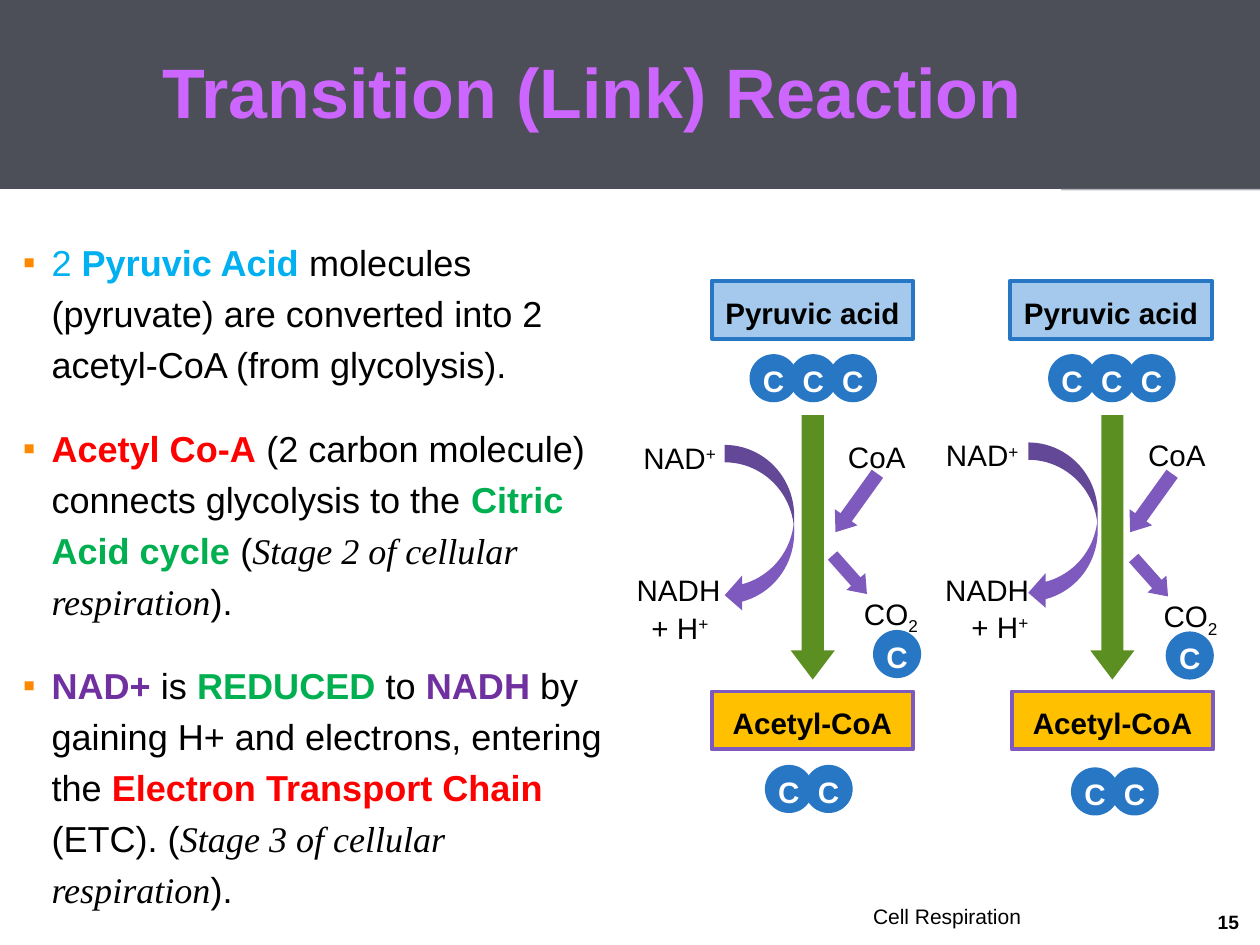
import pptx
import pptx.dml.color
import pptx.enum.shapes
import pptx.enum.text
import pptx.oxml.ns
import pptx.util
from lxml import etree

Cm, Pt = pptx.util.Cm, pptx.util.Pt
KIND = pptx.enum.shapes.MSO_SHAPE
ALIGN = pptx.enum.text.PP_ALIGN
ANCHOR = pptx.enum.text.MSO_ANCHOR

BLUE, PURPLE, GREEN = "2877C4", "7E5ABE", "5B8F22"
BLACK, RED, LEAF, VIOLET = "000000", "FF0000", "00B050", "7030A0"
BULLET = "FE8900"


def strong(color):
    return {"color": color, "bold": True}


STAGE = {"font": "Times New Roman", "italic": True}

TITLE = "Transition (Link) Reaction"
POINTS = [
    [("2 ", {"color": "00B0F0"}), ("Pyruvic Acid ", strong("00B0F0")),
     ("molecules (pyruvate) are converted into 2 acetyl-CoA (from glycolysis).", {})],
    [("Acetyl Co-A", strong(RED)),
     (" (2 carbon molecule) connects glycolysis to the ", {}),
     ("Citric Acid cycle ", strong(LEAF)), ("(", {}),
     ("Stage 2 of cellular respiration", STAGE), (").", {})],
    [("NAD+", strong(VIOLET)), (" is ", {}), ("REDUCED", strong(LEAF)),
     (" to ", {}), ("NADH", strong(VIOLET)),
     (" by gaining H+ and electrons, entering the ", {}),
     ("Electron Transport Chain ", strong(RED)), ("(ETC). (", {}),
     ("Stage 3 of cellular respiration", STAGE), (").", {})],
]

# Each part of the reaction: its places in the left and right pathway (cm)
ACIDS = [  # text, fill, line, places
    ("Pyruvic acid", "A4C9EC", BLUE, [(14.35, 5.66), (20.37, 5.66)]),
    ("Acetyl-CoA", "FFC000", PURPLE, [(14.35, 13.94), (20.4, 13.94)]),
]
CARBONS = [  # number of carbons, places of the first one
    (3, [(15.11, 7.14), (21.13, 7.14)]),
    (2, [(15.42, 15.42), (21.59, 15.47)]),
    (1, [(17.6, 12.7), (23.5, 12.73)]),
]
ARROWS = [  # kind, colour, size, rotation, places
    (KIND.DOWN_ARROW, GREEN, (0.89, 5.33), 0, [(15.94, 8.37), (21.98, 8.37)]),
    (KIND.LEFT_ARROW, PURPLE, (1.45, 0.56), 305.7, [(16.54, 9.86), (22.48, 9.86)]),
    (KIND.LEFT_ARROW, PURPLE, (1.04, 0.51), 228.3, [(16.61, 11.33), (22.68, 11.38)]),
    (KIND.CURVED_LEFT_ARROW, PURPLE, (1.4, 3.38), 0, [(14.61, 8.97), (20.73, 8.92)]),
]
RAISED, LOWERED = {"baseline": 30}, {"baseline": -25}
LABELS = [  # spans, width, places
    ([("NAD", {}), ("+", RAISED)], 1.5, [(12.95, 8.76), (19.05, 8.71)]),
    ([("NADH", {})], 1.7, [(12.83, 11.43), (19.05, 11.43)]),
    ([("+ H", {}), ("+", RAISED)], 1.19, [(13.11, 12.19), (19.56, 12.17)]),
    ([("CoA", {})], 1.17, [(17.09, 8.74), (23.14, 8.71)]),
    ([("CO", {}), ("2", LOWERED)], 1.12, [(17.4, 11.89), (23.44, 11.94)]),
]
CARBON_SIZE, CARBON_STEP = 0.97, 0.8
LABEL = {"size": 16.9, "align": ALIGN.CENTER, "spacing": 1.15, "before": 1.4}


def paint(target, color):
    if isinstance(target, pptx.dml.fill.FillFormat):
        target.solid()
        target = target.fore_color
    target.rgb = pptx.dml.color.RGBColor.from_string(color)


def write(frame, paragraphs, size, font="Arial", color=BLACK, bold=False,
          align=ALIGN.LEFT, anchor=ANCHOR.TOP, spacing=1.0, before=0, after=0,
          margins=(0, 0), wrap=True):
    """Fill a text frame; each paragraph is a list of (text, overrides)."""
    frame.auto_size = pptx.enum.text.MSO_AUTO_SIZE.NONE
    frame.word_wrap = wrap
    frame.vertical_anchor = anchor
    frame.margin_left = frame.margin_right = Cm(margins[0])
    frame.margin_top = frame.margin_bottom = Cm(margins[1])
    for number, spans in enumerate(paragraphs):
        para = frame.add_paragraph() if number else frame.paragraphs[0]
        para.alignment, para.line_spacing = align, spacing
        para.space_before, para.space_after = Pt(before), Pt(after)
        for text, style in spans:
            span = para.add_run()
            span.text = text
            span.font.size = Pt(size)
            span.font.name = style.get("font", font)
            span.font.bold = style.get("bold", bold)
            span.font.italic = style.get("italic", False)
            paint(span.font.color, style.get("color", color))
            if "baseline" in style:
                span._r.get_or_add_rPr().set("baseline", str(style["baseline"] * 1000))


def add_bullet(para):
    properties = para._p.get_or_add_pPr()
    properties.set("marL", str(Cm(0.58)))
    properties.set("indent", str(-Cm(0.58)))
    qn = pptx.oxml.ns.qn
    bullet_color = etree.SubElement(properties, qn("a:buClr"))
    etree.SubElement(bullet_color, qn("a:srgbClr"), val=BULLET)
    etree.SubElement(properties, qn("a:buFont"), typeface="Arial")
    etree.SubElement(properties, qn("a:buChar"), char="▪")


def add_shape(slide, kind, place, size, fill, line=None):
    shape = slide.shapes.add_shape(kind, *map(Cm, place + size))
    shape.shadow.inherit = False
    paint(shape.fill, fill)
    if line:
        paint(shape.line.fill, line)
        shape.line.width = Pt(2.25)
    else:
        shape.line.fill.background()
    return shape


def add_box(slide, place, size):
    return slide.shapes.add_textbox(*map(Cm, place + size))


def add_header(slide):
    title = slide.shapes.title
    title.left, title.top, title.width, title.height = map(Cm, (0, 0, 25.4, 3.81))
    paint(title.fill, "4D4F58")
    write(title.text_frame, [[(TITLE, {})]], 40, color="CC66FF", bold=True,
          anchor=ANCHOR.MIDDLE, spacing=0.95, margins=(3.28, 0.18))
    add_shape(slide, KIND.RECTANGLE, (21.39, 3.81), (4.01, 0.03), "B5B7BF")


def add_points(slide):
    frame = add_box(slide, (0, 4.45), (12.7, 13.82)).text_frame
    write(frame, POINTS, 20.6, spacing=1.18, after=18.8, margins=(0.46, 0.25))
    for para in frame.paragraphs:
        add_bullet(para)


def add_pathway(slide, side):
    for text, fill, line, places in ACIDS:
        box = add_shape(slide, KIND.RECTANGLE, places[side], (4.06, 1.17), fill, line)
        write(box.text_frame, [[(text, {})]], bold=True, anchor=ANCHOR.MIDDLE, **LABEL)
    for count, places in CARBONS:
        left, top = places[side]
        for number in range(count):
            carbon = add_shape(slide, KIND.OVAL, (left + number * CARBON_STEP, top),
                               (CARBON_SIZE, CARBON_SIZE), BLUE)
            write(carbon.text_frame, [[("C", {})]], color="FFFFFF", bold=True,
                  anchor=ANCHOR.MIDDLE, wrap=False, **LABEL)
    for spans, width, places in LABELS:
        box = add_box(slide, places[side], (width, 0.84))
        write(box.text_frame, [spans], wrap=False, **LABEL)
    for kind, color, size, rotation, places in ARROWS:
        arrow = add_shape(slide, kind, places[side], size, color)
        arrow.rotation = rotation
        if kind != KIND.CURVED_LEFT_ARROW:
            arrow.adjustments[1] = 0.66


def add_footer(slide):
    number = add_box(slide, (24.13, 18.21), (1.27, 0.76))
    write(number.text_frame, [[("15", {})]], 11, bold=True, align=ALIGN.CENTER,
          anchor=ANCHOR.MIDDLE, margins=(0.25, 0.13))
    footer = add_box(slide, (17.35, 17.83), (8.05, 1.02))
    write(footer.text_frame, [[("Cell Respiration", {})]], 12,
          anchor=ANCHOR.BOTTOM, margins=(0.25, 0.13))


def main():
    deck = pptx.Presentation()
    deck.slide_width, deck.slide_height = Cm(25.4), Cm(19.05)
    slide = deck.slides.add_slide(deck.slide_layouts[5])
    add_header(slide)
    add_points(slide)
    for side in range(2):
        add_pathway(slide, side)
    add_footer(slide)
    deck.save("out.pptx")


if __name__ == "__main__":
    main()
